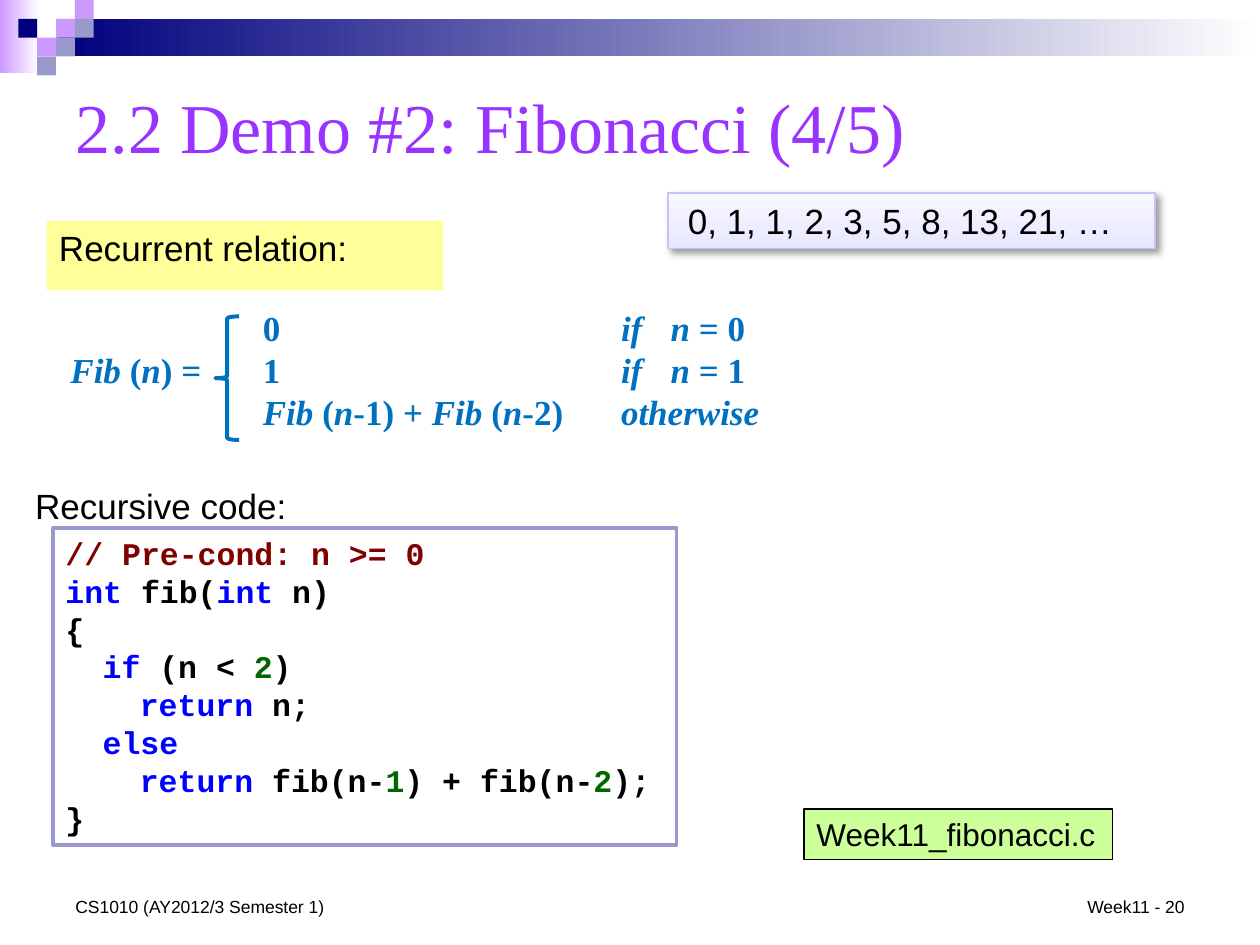
"""Build the Fibonacci demo slide with its recurrence relation and recursive code."""
from copy import deepcopy

from lxml import etree
from pptx import Presentation, util as u
from pptx.dml import color
from pptx.enum import shapes, text
from pptx.oxml import ns

rgb = color.RGBColor.from_string
RECT = shapes.MSO_SHAPE.RECTANGLE
LEFT, CENTER, RIGHT = text.PP_ALIGN.LEFT, text.PP_ALIGN.CENTER, text.PP_ALIGN.RIGHT
TOP, MIDDLE, BOTTOM = text.MSO_ANCHOR.TOP, text.MSO_ANCHOR.MIDDLE, text.MSO_ANCHOR.BOTTOM


def add_box(place, fill=None, line=None, width=1, preset=RECT, angle=0):
    """Add a shape; fill is a hex string or a list of (position, hex) stops."""
    box = slide.shapes.add_shape(preset, *map(u.Cm, place))
    box.shadow.inherit = False
    if fill is None:
        box.fill.background()
    elif isinstance(fill, str):
        box.fill.solid()
        box.fill.fore_color.rgb = rgb(fill)
    else:
        box.fill.gradient()
        box.fill.gradient_angle = angle
        stop_list = box.fill._fill._gradFill.gsLst
        while len(stop_list) < len(fill):
            stop_list.append(deepcopy(stop_list[0]))
        for stop, (position, shade) in zip(box.fill.gradient_stops, fill):
            stop.position = position
            stop.color.rgb = rgb(shade)
    if line:
        box.line.color.rgb = rgb(line)
        box.line.width = u.Pt(width)
    else:
        box.line.fill.background()
    return box


def write(frame, lines, size, font="Arial", shade="000000", align=LEFT, anchor=TOP,
          wrap=True, tabs=(), **common):
    """Fill a frame with lines, each a list of (text, format values) runs."""
    frame.word_wrap, frame.vertical_anchor = wrap, anchor
    for index, line in enumerate(lines):
        paragraph = frame.add_paragraph() if index else frame.paragraphs[0]
        paragraph.alignment = align
        if tabs:
            tab_list = etree.SubElement(paragraph._p.get_or_add_pPr(), ns.qn("a:tabLst"))
            for stop in tabs:
                etree.SubElement(tab_list, ns.qn("a:tab"), pos=str(u.Cm(stop)), algn="l")
        for words, values in line:
            run = paragraph.add_run()
            run.text = words
            run.font.color.rgb = rgb(values.get("shade", shade))
            settings = {"name": font, "size": u.Pt(size), **common, **values}
            settings.pop("shade", None)
            for name, value in settings.items():
                setattr(run.font, name, value)


deck = Presentation()
deck.slide_width, deck.slide_height = u.Cm(25.4), u.Cm(19.05)
slide = deck.slides.add_slide(deck.slide_layouts[5])

add_box((0, 0, 0.79, 1.47), [(0, "CC99FF"), (1, "FFFFFF")])
add_box((1.14, 0.38, 24.26, 0.76), [(0, "00007D"), (1, "FFFFFF")])
cell = 0.38
mosaic = [(2, 1, "CC99FF"), (3, 0, "CC99FF"), (3, 1, "9999CC"), (1, 2, "CC99FF"),
          (0, 1, "00007D"), (2, 2, "9999CC"), (1, 3, "9999CC")]
for column, row, shade in mosaic:
    add_box((0.37 + column * cell, row * cell, cell, cell), shade)

title = slide.shapes.title
title.left, title.top, title.width, title.height = map(u.Cm, (1.27, 1.27, 22.86, 2.51))
write(title.text_frame, [[("2.2 Demo #2: Fibonacci (4/5)", {})]], 40,
      "Times New Roman", "9933FF", anchor=MIDDLE)

sequence = add_box((13.46, 3.89, 9.83, 1.12),
                   [(0, "E6E6FF"), (0.35, "EDEDFF"), (1, "F8F8FF")], "C4C4FB", angle=90)
effects = sequence._element.spPr.find(ns.qn("a:effectLst"))
shadow = etree.SubElement(effects, ns.qn("a:outerShdw"), blurRad=str(u.Pt(4)),
                          dist=str(u.Pt(3)), dir="2700000", rotWithShape="0")
shadow_colour = etree.SubElement(shadow, ns.qn("a:srgbClr"), val="000000")
etree.SubElement(shadow_colour, ns.qn("a:alpha"), val="40000")
sequence.text_frame.margin_right = u.Cm(0.7)
write(sequence.text_frame, [[("0, 1, 1, 2, 3, 5, 8, 13, 21, …", {})]], 20, align=CENTER)

relation = add_box((0.94, 4.45, 8, 1.4), "FFFF99")
write(relation.text_frame, [[("Recurrent relation:", {})]], 20)

italic, upright = {"italic": True}, {"italic": False}
formula = [
    [("\t", italic), ("0", upright), ("\tif\tn ", italic), ("= 0", upright)],
    [("Fib ", italic), ("(", upright), ("n", italic), (") =\t1\t", upright),
     ("if\tn ", italic), ("= 1", upright)],
    [("\tFib ", italic), ("(", upright), ("n", italic), ("-1) + ", upright),
     ("Fib ", italic), ("(", upright), ("n", italic), ("-2)\t", upright),
     ("otherwise", italic)],
]
recurrence = slide.shapes.add_textbox(*map(u.Cm, (1.17, 6.05, 14.4, 2.82)))
write(recurrence.text_frame, formula, 20, "Times New Roman", "0070C0",
      wrap=False, tabs=(3.88, 11.1, 12.1), bold=True)
add_box((4.34, 6.38, 0.48, 2.49), line="0070C0", width=2.25,
        preset=shapes.MSO_SHAPE.LEFT_BRACE)

keyword, number, plain = {"shade": "0000FF"}, {"shade": "006600"}, {}
code = [
    [("// Pre-cond: n >= 0", {"shade": "800000"})],
    [("int", keyword), (" fib(", plain), ("int", keyword), (" n)", plain)],
    [("{", plain)],
    [("\t", plain), ("if", keyword), (" (n < ", plain), ("2", number), (")", plain)],
    [("\t\t", plain), ("return", keyword), (" n;", plain)],
    [("\t", plain), ("else", keyword)],
    [("\t\t", plain), ("return", keyword), (" fib(n-", plain), ("1", number),
     (") + fib(n-", plain), ("2", number), (");", plain)],
    [("}", plain)],
]
listing = add_box((1.07, 10.64, 12.57, 6.4), "FFFFFF", "9999CC", 2)
write(listing.text_frame, code, 18, "Courier New", tabs=(0.75, 1.5, 2.25), bold=True)

source_file = add_box((16.21, 16.31, 6.22, 1.02), "CCFF99", "000000", 0.75)
write(source_file.text_frame, [[("Week11_fibonacci.c", {})]], 18)

labels = [
    ((0.46, 9.65, 6.12, 1.12), "Recursive code:", 20, LEFT, TOP),
    ((1.27, 17.35, 8.05, 1.27), "CS1010 (AY2012/3 Semester 1)", 10, LEFT, BOTTOM),
    ((18.21, 17.35, 5.92, 1.27), "Week11 - 20", 10, RIGHT, BOTTOM),
]
for place, words, size, align, anchor in labels:
    label = slide.shapes.add_textbox(*map(u.Cm, place))
    write(label.text_frame, [[(words, {})]], size, align=align, anchor=anchor)

deck.save("out.pptx")
